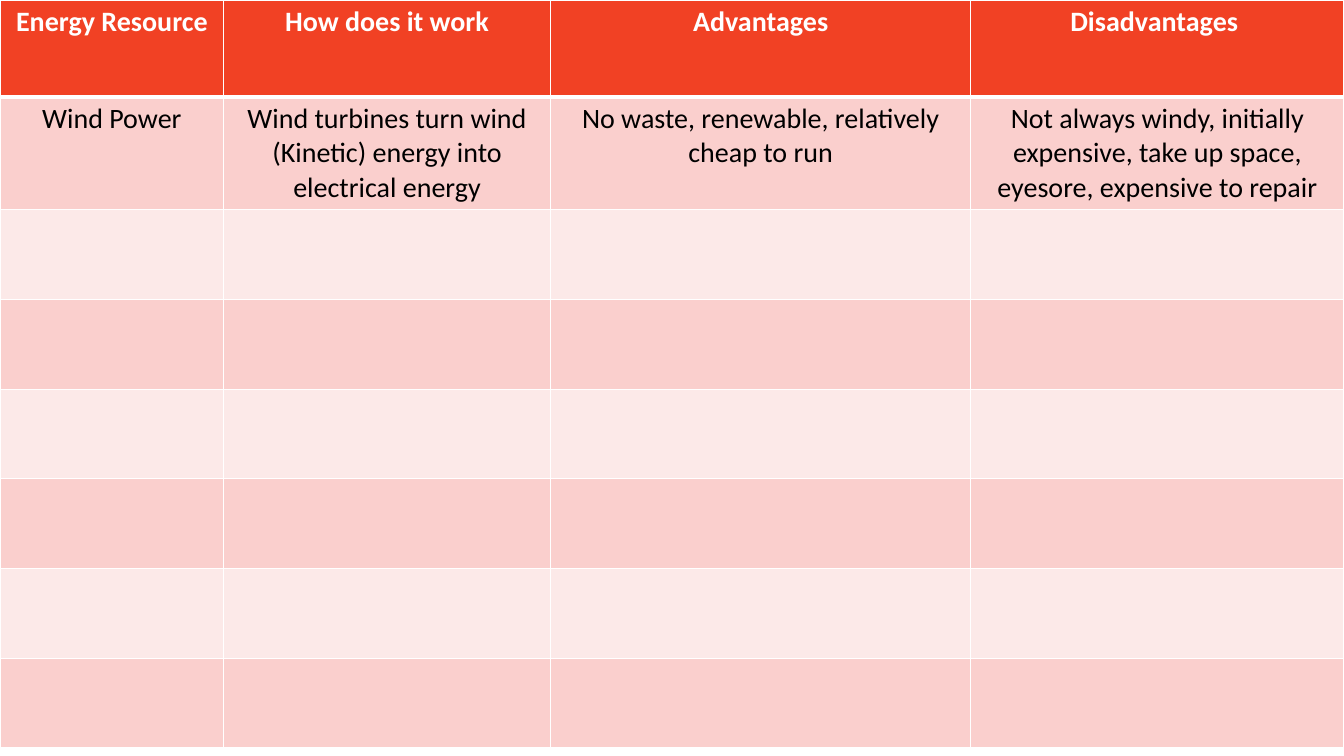
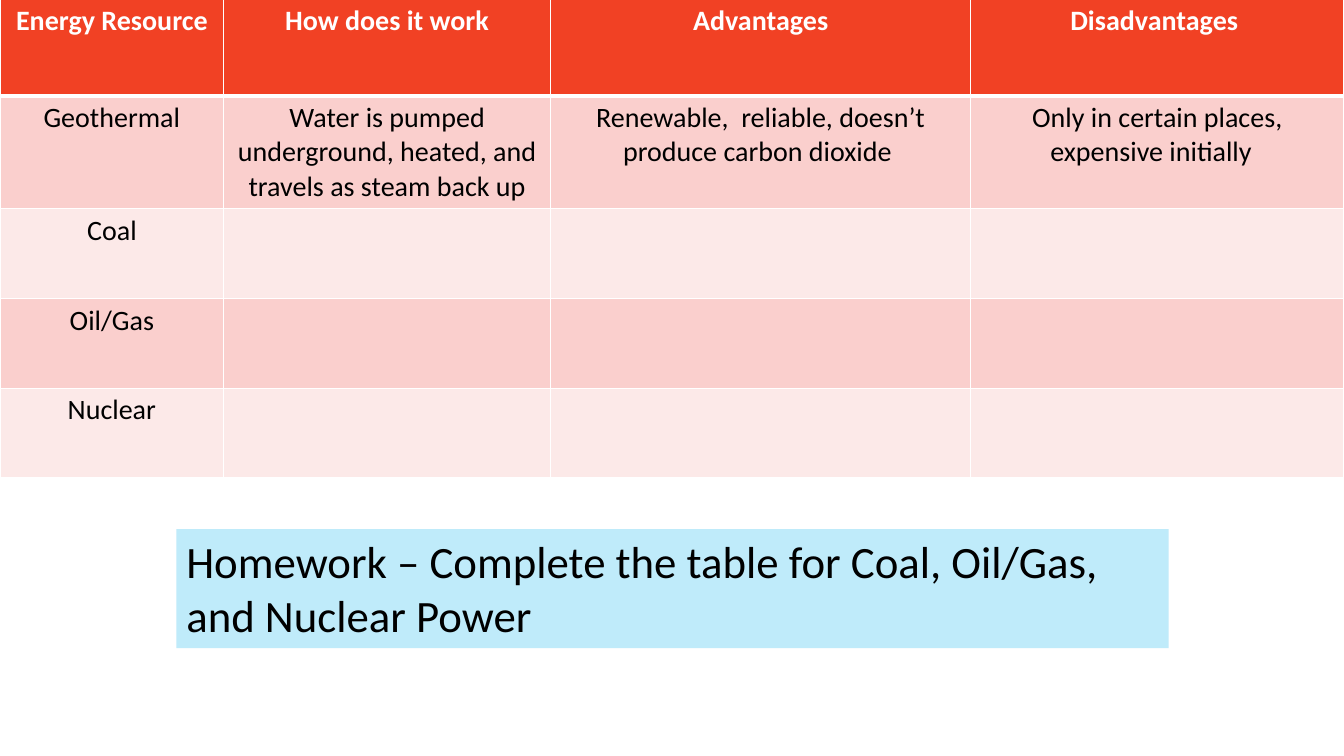
from dataclasses import dataclass

from lxml.etree import SubElement
from pptx import Presentation
from pptx.dml.color import RGBColor
from pptx.enum.shapes import MSO_SHAPE
from pptx.enum.text import MSO_ANCHOR, PP_ALIGN
from pptx.oxml.ns import qn
from pptx.util import Inches, Pt

HEADINGS = ["Energy Resource", "How does it work", "Advantages", "Disadvantages "]
EMPTY_ROW = [""] * len(HEADINGS)
WIND_ROWS = [
    ["Wind Power",
     "Wind turbines turn wind (Kinetic) energy into electrical energy",
     "No waste, renewable, relatively cheap to run",
     "Not always windy, initially expensive, take up space, eyesore, expensive to repair"],
] + [EMPTY_ROW] * 6
HOMEWORK_ROWS = [
    ["Geothermal",
     "Water is pumped underground, heated, and travels as steam back up",
     "Renewable,  reliable, doesn’t produce carbon dioxide ",
     "Only in certain places, expensive initially  "],
    ["Coal", "", "", ""],
    ["Oil/Gas", "", "", ""],
    ["Nuclear", "", "", ""],
]
HOMEWORK = "Homework – Complete the table for Coal, Oil/Gas, and Nuclear Power"

COLUMN_WIDTHS = [2.22, 3.24, 4.17, 3.7]
HEADER_HEIGHT, ROW_HEIGHT = 0.96, 0.89


@dataclass(frozen=True)
class Theme:
    font: str = "Calibri"
    table_size: int = 20
    homework_size: int = 32
    text: str = "000000"
    header_text: str = "FFFFFF"
    header_fill: str = "F14124"
    bands: tuple = ("FACFCD", "FCE9E8")
    homework_fill: str = "BFEBFA"
    border: str = "FFFFFF"
    thin: int = 1
    thick: int = 3


THEME = Theme()


def paint(target, color):
    target.fill.solid()
    target.fill.fore_color.rgb = RGBColor.from_string(color)


def write(text_frame, text, size, color, bold=False, align=PP_ALIGN.LEFT):
    paragraph = text_frame.paragraphs[0]
    paragraph.alignment = align
    if not text:
        return
    run = paragraph.add_run()
    run.text = text
    font_values = {"name": THEME.font, "size": Pt(size), "bold": bold}
    for attribute, value in font_values.items():
        setattr(run.font, attribute, value)
    run.font.color.rgb = RGBColor.from_string(color)


def add_borders(cell, top, bottom):
    """Draw the four cell borders; call before the fill, which must follow them in the XML."""
    properties = cell._tc.get_or_add_tcPr()
    widths = {"a:lnL": THEME.thin, "a:lnR": THEME.thin, "a:lnT": top, "a:lnB": bottom}
    for tag, width in widths.items():
        line = SubElement(properties, qn(tag), w=str(Pt(width)))
        fill = SubElement(line, qn("a:solidFill"))
        SubElement(fill, qn("a:srgbClr"), val=THEME.border)


def add_energy_table(slide, body_rows, top):
    rows = [HEADINGS] + body_rows
    heights = [HEADER_HEIGHT] + [ROW_HEIGHT] * len(body_rows)
    frame = slide.shapes.add_table(
        len(rows), len(HEADINGS), Inches(0), Inches(top),
        Inches(sum(COLUMN_WIDTHS)), Inches(sum(heights)))
    table = frame.table
    table.horz_banding = False
    for column, width in zip(table.columns, COLUMN_WIDTHS):
        column.width = Inches(width)
    for index, (row, height, texts) in enumerate(zip(table.rows, heights, rows)):
        row.height = Inches(height)
        is_header = index == 0
        fill = THEME.header_fill if is_header else THEME.bands[(index - 1) % 2]
        color = THEME.header_text if is_header else THEME.text
        for cell, text in zip(row.cells, texts):
            add_borders(cell,
                        top=THEME.thick if index == 1 else THEME.thin,
                        bottom=THEME.thick if is_header else THEME.thin)
            paint(cell, fill)
            write(cell.text_frame, text, THEME.table_size, color, is_header, PP_ALIGN.CENTER)


def add_homework_box(slide):
    box = slide.shapes.add_shape(
        MSO_SHAPE.RECTANGLE, Inches(1.75), Inches(5.25), Inches(9.84), Inches(1.18))
    box.shadow.inherit = False
    box.line.fill.background()
    paint(box, THEME.homework_fill)
    box.text_frame.word_wrap = True
    box.text_frame.vertical_anchor = MSO_ANCHOR.TOP
    write(box.text_frame, HOMEWORK, THEME.homework_size, THEME.text)


def main():
    presentation = Presentation()
    presentation.slide_width = Inches(13.33)
    presentation.slide_height = Inches(7.5)
    blank = presentation.slide_layouts[6]

    wind_slide = presentation.slides.add_slide(blank)
    add_energy_table(wind_slide, WIND_ROWS, top=0)

    homework_slide = presentation.slides.add_slide(blank)
    add_energy_table(homework_slide, HOMEWORK_ROWS, top=-0.01)
    add_homework_box(homework_slide)

    presentation.save("out.pptx")


if __name__ == "__main__":
    main()
